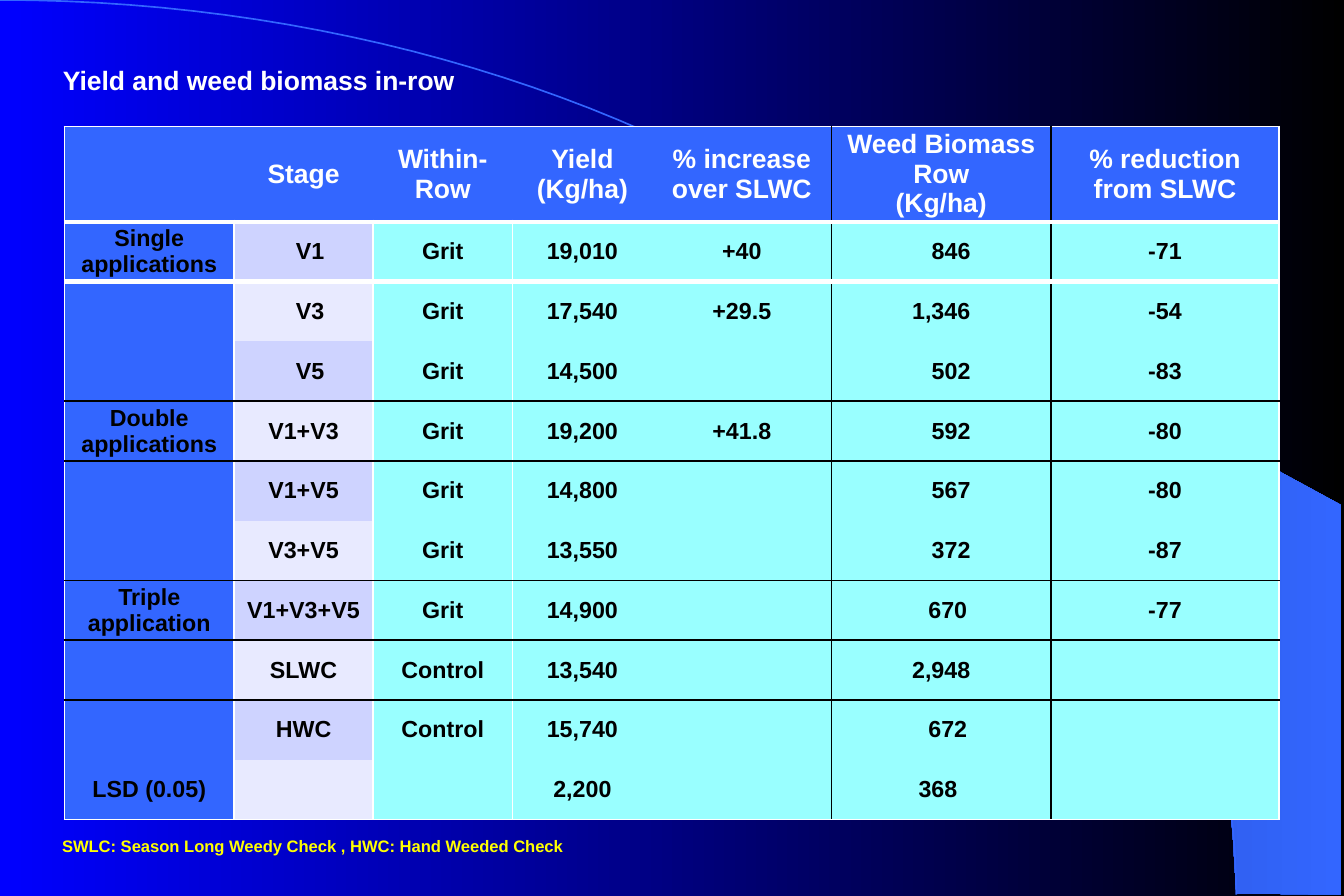
"""Build a slide with a table of yield and weed biomass in the row."""
from math import cos, pi, sin
from typing import NamedTuple

from lxml.etree import SubElement
from pptx import Presentation
from pptx.dml.color import RGBColor
from pptx.dml.fill import FillFormat
from pptx.enum.text import MSO_ANCHOR, PP_ALIGN
from pptx.oxml.ns import qn
from pptx.shapes.freeform import FreeformBuilder
from pptx.slide import Slide
from pptx.table import Table, _Cell
from pptx.text.text import _Paragraph
from pptx.util import Cm, Pt

HUES = {
    "white": "FFFFFF", "black": "000000", "yellow": "FFFF00",
    "deep": "0000FF", "dusk": "2449B6", "blue": "3366FF",
    "cyan": "99FFFF", "lilac": "CED3FF", "pale": "E8EAFF",
}
PLAIN = "{2D5ABB26-0587-4C30-8999-92F81FD0307C}"
SPACE = 0.14
INSET = 0.18
WIDTHS = (3.61, 2.95, 2.97, 2.97, 3.81, 4.67, 4.85)
HEAD = ("", "Stage", "Within-Row", "Yield\n(Kg/ha)", "% increase over SLWC",
        "Weed Biomass\nRow\n(Kg/ha)", "% reduction from SLWC")
LENS = ((26.29, 19), (28.52, 19.02), (28.52, 10.74), (16.84, 4.39),
        (17.83, 5.05), (18.64, 5.64), (19.58, 6.35), (20.47, 7.11),
        (21.77, 8.38), (22.94, 9.75), (23.77, 10.95), (24.51, 12.17),
        (25.1, 13.41), (25.53, 14.53), (25.81, 15.47), (26.09, 16.66),
        (26.21, 17.68))


class Edge(NamedTuple):
    hue: str
    width: float


class Row(NamedTuple):
    cells: tuple[str, ...]
    stage: int = 0
    weed: int = 0


class Note(NamedTuple):
    text: str
    box: tuple[float, float, float, float]
    size: int
    hue: str
    form: dict


THIN = Edge("white", 1)
DARK = Edge("black", 1)
ACROSS = {0: THIN, 1: Edge("white", 3), 4: DARK, 7: DARK, 8: DARK, 11: THIN}
DOWN = {0: THIN, 1: THIN, 2: THIN, 5: DARK, 7: THIN}

ROWS = (
    Row(("Single applications", "V1", "Grit", "19,010", "+40", "846", "-71"), 2, 3),
    Row(("", "V3", "Grit", "17,540", "+29.5", "1,346", "-54"), 2),
    Row(("", "V5", "Grit", "14,500", "", "502", "-83"), 2, 3),
    Row(("Double applications", "V1+V3", "Grit", "19,200", "+41.8", "592", "-80"), 0, 3),
    Row(("", "V1+V5", "Grit", "14,800", "", "567", "-80"), 0, 3),
    Row(("", "V3+V5", "Grit", "13,550", "", "372", "-87"), 0, 3),
    Row(("Triple application", "V1+V3+V5", "Grit", "14,900", "", "670", "-77"), 0, 2),
    Row(("", "SLWC", "Control", "13,540", "", "2,948", "")),
    Row(("", "HWC", "Control", "15,740", "", "672", ""), 0, 2),
    Row(("LSD (0.05)", "", "", "2,200", "", "368", ""), 0, -1),
)
NOTES = (
    Note("Yield and weed biomass in-row", (1.09, 1.24, 24, 0.94), 16, "white", {}),
    Note("SWLC: Season Long Weedy Check , HWC: Hand Weeded Check",
         (1.07, 17.5, 12.14, 0.84), 10, "yellow", {"line_spacing": Pt(16)}),
)


def tint(name: str) -> RGBColor:
    return RGBColor.from_string(HUES[name])


def apply(item: object, form: dict) -> None:
    for key, value in form.items():
        setattr(item, key, value)


def style(para: _Paragraph, size: int, hue: str) -> None:
    apply(para.font, {"name": "Arial", "size": Pt(size), "bold": True})
    para.font.color.rgb = tint(hue)


def blend(fill: FillFormat, start: str, end: str) -> None:
    fill.gradient()
    fill.gradient_angle = 0
    for stop, name in zip(fill.gradient_stops, (start, end)):
        stop.color.rgb = tint(name)


def trace(slide: Slide, points: list | tuple, close: bool) -> FreeformBuilder:
    spots = [(Cm(x), Cm(y)) for x, y in points]
    pen = slide.shapes.build_freeform(*spots[0])
    pen.add_line_segments(spots[1:], close=close)
    return pen


def scene(slide: Slide) -> None:
    blend(slide.background.fill, "deep", "black")
    lens = trace(slide, LENS, True).convert_to_shape()
    lens.shadow.inherit = False
    blend(lens.fill, "dusk", "blue")
    lens.line.fill.background()
    turns = [pi / 2 * step / 60 for step in range(61)]
    curve = [(26.29 * sin(turn), 19.02 * (1 - cos(turn))) for turn in turns]
    arc = trace(slide, curve, False).convert_to_shape()
    arc.shadow.inherit = False
    arc.fill.background()
    arc.line.color.rgb = tint("blue")
    arc.line.width = Pt(1)


def rule(cell: _Cell, row: int, col: int) -> None:
    down = {0: THIN, 5: DARK, 7: THIN} if row == 0 else DOWN
    edges = {"L": down.get(col), "R": down.get(col + 1),
             "T": ACROSS.get(row), "B": ACROSS.get(row + 1)}
    props = cell._tc.get_or_add_tcPr()
    for side, edge in edges.items():
        if edge:
            line = SubElement(props, qn(f"a:ln{side}"), w=str(Pt(edge.width)))
            solid = SubElement(line, qn("a:solidFill"))
            SubElement(solid, qn("a:srgbClr"), val=HUES[edge.hue])


def shade(row: int, col: int) -> str:
    if row == 0 or col == 0:
        return "blue"
    if col == 1:
        return "lilac" if row % 2 else "pale"
    return "cyan"


def write(table: Table, row: int, col: int, text: str, nudge: int) -> None:
    cell = table.cell(row, col)
    apply(cell, {
        "vertical_anchor": MSO_ANCHOR.MIDDLE, "margin_top": 0, "margin_bottom": 0,
        "margin_left": Cm(INSET + SPACE * max(nudge, 0)),
        "margin_right": Cm(INSET + SPACE * max(-nudge, 0)), "text": text,
    })
    for para in cell.text_frame.paragraphs:
        para.alignment = PP_ALIGN.CENTER
        style(para, 14 if row else 16, "black" if row else "white")
    rule(cell, row, col)
    cell.fill.solid()
    cell.fill.fore_color.rgb = tint(shade(row, col))


def grid(slide: Slide) -> None:
    rows = (Row(HEAD), *ROWS)
    table = slide.shapes.add_table(len(rows), len(WIDTHS), Cm(1.37), Cm(2.69),
                                   Cm(sum(WIDTHS)), Cm(14.73)).table
    apply(table, {"first_row": False, "horz_banding": False})
    table._tbl.tblPr.find(qn("a:tableStyleId")).text = PLAIN
    for col, width in enumerate(WIDTHS):
        table.columns[col].width = Cm(width)
    for index, row in enumerate(rows):
        table.rows[index].height = Cm(1.27 if index else 2.03)
        nudges = {1: row.stage, 5: row.weed}
        for col, text in enumerate(row.cells):
            write(table, index, col, text, nudges.get(col, 0))


def label(slide: Slide, note: Note) -> None:
    frame = slide.shapes.add_textbox(*map(Cm, note.box)).text_frame
    apply(frame, {"word_wrap": True, "text": note.text})
    para = frame.paragraphs[0]
    apply(para, note.form)
    style(para, note.size, note.hue)


def main() -> None:
    deck = Presentation()
    apply(deck, {"slide_width": Cm(28.58), "slide_height": Cm(19.05)})
    slide = deck.slides.add_slide(deck.slide_layouts[6])
    scene(slide)
    grid(slide)
    for note in NOTES:
        label(slide, note)
    deck.save("out.pptx")


if __name__ == "__main__":
    main()
